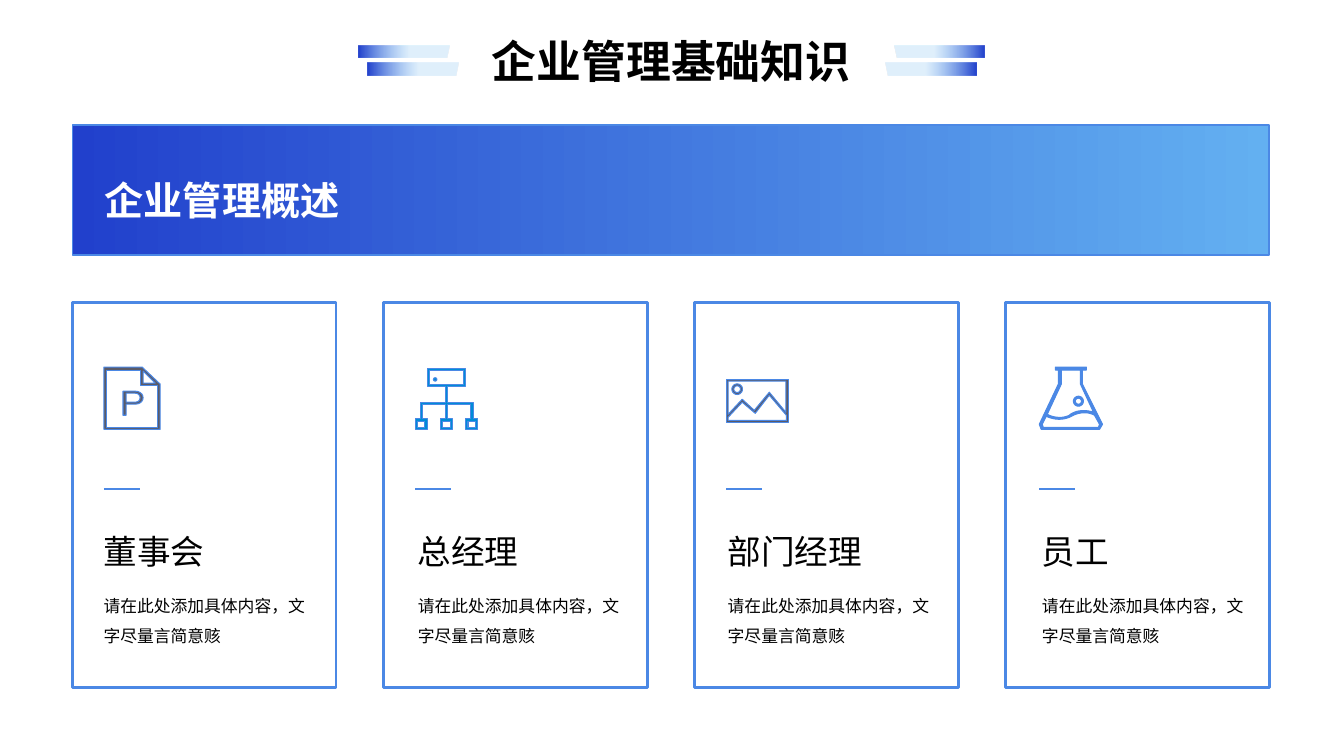
import math

import pptx
import pptx.dml.color
import pptx.enum.shapes
import pptx.enum.text
import pptx.util
from lxml import etree
from pptx.oxml.ns import qn
from pptx.util import Cm, Pt

RGBColor = pptx.dml.color.RGBColor
BLACK = RGBColor(0x00, 0x00, 0x00)
WHITE = RGBColor(0xFF, 0xFF, 0xFF)
DEEP_BLUE = RGBColor(0x21, 0x40, 0xCC)
SKY_BLUE = RGBColor(0x63, 0xB0, 0xF1)
EDGE_BLUE = RGBColor(0x4B, 0x88, 0xE5)
CHART_BLUE = RGBColor(0x00, 0x8C, 0xD7)
GREY = RGBColor(0x5A, 0x5A, 0x67)

ICON_GRID = 62  # icon units across one icon
ICON_SIZE = 1.57
FINE = 10  # freeform units per icon unit


def curve(start, first, second, end, steps=10):
    """Points along a cubic curve."""
    points = []
    for step in range(steps + 1):
        t = step / steps
        weights = ((1 - t) ** 3, 3 * t * (1 - t) ** 2, 3 * t * t * (1 - t), t ** 3)
        points.append(tuple(
            sum(weight * point[axis] for weight, point in zip(weights, (start, first, second, end)))
            for axis in (0, 1)))
    return points


def circle(x, y, radius, steps=24):
    angles = [2 * math.pi * step / steps for step in range(steps)]
    return [(x + radius * math.cos(angle), y + radius * math.sin(angle)) for angle in angles]


def box(left, top, right, bottom):
    return [(left, top), (right, top), (right, bottom), (left, bottom)]


DOCUMENT_ICON = [
    [(0, 0), (38, 0), (56, 17), (56, 62), (0, 62)],
    [(3, 3), (3, 60), (53, 60), (53, 18), (36, 18), (36, 3)],
    [(39, 4), (39, 16), (51, 16)],
    [(19, 24), *curve((31, 24), (41.7, 24), (41.7, 37), (31, 37)), (22, 37), (22, 48), (19, 48)],
    [(22, 26), (22, 35), *curve((31, 35), (37.7, 35), (37.7, 26), (31, 26))],
]
ORGANISATION_ICON = [
    [(50, 1), (50, 19), (32, 19), (32, 35), (58, 35), (58, 51), (62.5, 51), (62.5, 62),
     (50, 62), (50, 51), (55, 51), (55, 37), (32, 37), (32, 51), (37, 51), (37, 62),
     (25, 62), (25, 51), (30, 51), (30, 37), (7, 37), (7, 51), (12, 51), (12, 62),
     (0, 62), (0, 51), (5, 51), (5, 35), (30, 35), (30, 19), (12, 19), (12, 1)],
    *[box(left, 54, left + 7.5, 60) for left in (2.3, 27.5, 52.7)],
    box(14, 3, 48, 17),
    circle(20, 12.3, 1.7),
]
PHOTO_ICON = [
    box(0, 12, 62, 55),
    [(43, 28), (29, 46), (16, 35), (2, 50), (2, 53), (60, 53), (60, 48)],
    [(59.5, 14), (2, 14), (2, 47), (16, 32), (28, 43), (43, 25), (59.5, 45)],
    circle(11, 22, 5.3),
    circle(11, 22, 3.3),
]
FLASK_ICON = [
    [(47, 0), (47, 3), (43, 3), (43, 17), (63, 57), (60, 62), (2, 62), (0, 57),
     (19, 17), (19, 3), (16, 3), (16, 0)],
    [*curve((32, 49), (25, 53), (15, 53), (7, 49)), (3, 57), (4, 60), (59, 60), (60, 57),
     *curve((55, 48), (48, 44), (39, 45), (32, 49))],
    [(41, 3), (22, 3), (22, 17), *curve((8, 47), (15, 51), (24, 51), (30, 48)),
     *curve((31, 47), (37, 43), (46, 42), (54, 45)), (41, 17)],
    circle(39, 34, 5),
    circle(39, 34, 3),
]

# name, icon outlines, icon colour, icon inset, text inset, name width
CARDS = [
    ("董事会", DOCUMENT_ICON, GREY, 0.79, 0.53, 3.53),
    ("总经理", ORGANISATION_ICON, CHART_BLUE, 0.79, 0.61, 3.53),
    ("部门经理", PHOTO_ICON, GREY, 0.79, 0.58, 4.42),
    ("员工", FLASK_ICON, EDGE_BLUE, 0.84, 0.66, 3.53),
]
CARD_LEFT, CARD_PITCH = 1.83, 7.84
CARD_TEXT = "请在此处添加具体内容，文字尽量言简意赅"


class SlidePainter:
    """Slide being built, with its font; all lengths are in centimetres."""

    font_name = "Arial"

    def __init__(self, presentation):
        self.slide = presentation.slides.add_slide(presentation.slide_layouts[5])
        self.shapes = self.slide.shapes

    def fill_text(self, shape, text, size, color, **formats):
        frame = shape.text_frame
        frame.text = text
        frame.word_wrap = True
        frame.auto_size = pptx.enum.text.MSO_AUTO_SIZE.NONE
        frame.vertical_anchor = pptx.enum.text.MSO_ANCHOR.TOP
        paragraph = frame.paragraphs[0]
        paragraph.line_spacing = formats.pop("line_spacing", 1.0)
        paragraph.alignment = formats.pop("alignment", pptx.enum.text.PP_ALIGN.LEFT)
        font = paragraph.runs[0].font
        for name, value in {"name": self.font_name, "size": Pt(size), **formats}.items():
            setattr(font, name, value)
        font.color.rgb = color

    def title(self, text, left, top, width, height):
        title = self.shapes.title
        for name, value in {"left": left, "top": top, "width": width, "height": height}.items():
            setattr(title, name, Cm(value))
        self.fill_text(title, text, 32, BLACK, bold=True,
                       alignment=pptx.enum.text.PP_ALIGN.CENTER)

    def text(self, text, left, top, width, height, size, color=BLACK, bold=False):
        shape = self.shapes.add_textbox(Cm(left), Cm(top), Cm(width), Cm(height))
        self.fill_text(shape, text, size, color, bold=bold, line_spacing=1.5)

    def edge(self, shape, width):
        shape.shadow.inherit = False
        shape.line.color.rgb = EDGE_BLUE
        shape.line.width = Pt(width)

    def gradient(self, shape, angle=0, end=1.0, end_opacity=100):
        shape.fill.gradient()
        shape.fill.gradient_angle = angle
        stops = shape.fill.gradient_stops
        for stop, color, position in zip(stops, (DEEP_BLUE, SKY_BLUE), (0, end)):
            stop.color.rgb = color
            stop.position = position
        if end_opacity < 100:
            end_color = shape.element.spPr.findall(".//" + qn("a:srgbClr"))[-1]
            etree.SubElement(end_color, qn("a:alpha")).set("val", str(end_opacity * 1000))

    def rectangle(self, left, top, width, height, edge_width):
        shape = self.shapes.add_shape(
            pptx.enum.shapes.MSO_SHAPE.RECTANGLE, Cm(left), Cm(top), Cm(width), Cm(height))
        shape.fill.background()
        self.edge(shape, edge_width)
        return shape

    def title_bar(self, left, top, mirrored):
        """Slanted bar that fades towards the title."""
        width, height, slant = 2.28, 0.32, 0.07
        points = [(0, 0), (width, 0), (width - slant, height), (0, height)]
        if mirrored:
            points = [(width - x, y) for x, y in points]
        points = [(Cm(left + x), Cm(top + y)) for x, y in points]
        builder = self.shapes.build_freeform(*points[0])
        builder.add_line_segments(points[1:])
        shape = builder.convert_to_shape()
        shape.shadow.inherit = False
        shape.line.fill.background()
        self.gradient(shape, 180 if mirrored else 0, 0.56, 20)

    def icon(self, outlines, color, left, top):
        scale = Cm(ICON_SIZE) / (ICON_GRID * FINE)
        builder = None
        for outline in outlines:
            first, *rest = [(x * FINE, y * FINE) for x, y in outline]
            if builder is None:
                builder = self.shapes.build_freeform(*first, scale=scale)
            else:
                builder.move_to(*first)
            builder.add_line_segments(rest)
        shape = builder.convert_to_shape(Cm(left), Cm(top))
        shape.fill.solid()
        shape.fill.fore_color.rgb = color
        self.edge(shape, 0.75)

    def dash(self, left, top, length):
        line = self.shapes.add_connector(
            pptx.enum.shapes.MSO_CONNECTOR.STRAIGHT,
            Cm(left), Cm(top), Cm(left + length), Cm(top))
        line.line.color.rgb = EDGE_BLUE
        line.line.width = Pt(2)
        etree.SubElement(line.element.spPr, qn("a:effectLst"))

    def card(self, left, name, outlines, color, icon_inset, text_inset, name_width):
        self.rectangle(left, 7.62, 6.64, 9.7, 2)
        self.icon(outlines, color, left + icon_inset, 9.25)
        self.dash(left + icon_inset, 12.32, 0.9)
        self.text(name, left + text_inset, 12.75, name_width, 1.78, 24)
        self.text(CARD_TEXT, left + text_inset, 14.63, 5.64, 1.78, 12)


def main():
    presentation = pptx.Presentation()
    presentation.slide_width = Cm(33.87)
    presentation.slide_height = Cm(19.05)
    painter = SlidePainter(presentation)

    for left, top, mirrored in ((9.04, 1.14, False), (9.27, 1.57, False),
                                (22.54, 1.14, True), (22.33, 1.57, True)):
        painter.title_bar(left, top, mirrored)
    painter.title("企业管理基础知识", 11.71, 0.71, 10.41, 1.6)

    banner = painter.rectangle(CARD_LEFT, 3.15, 30.15, 3.28, 1)
    painter.gradient(banner)
    painter.text("企业管理概述", 2.39, 3.73, 6.71, 2.03, 28, WHITE, bold=True)

    for index, card in enumerate(CARDS):
        painter.card(CARD_LEFT + index * CARD_PITCH, *card)
    presentation.save("out.pptx")


if __name__ == "__main__":
    main()
